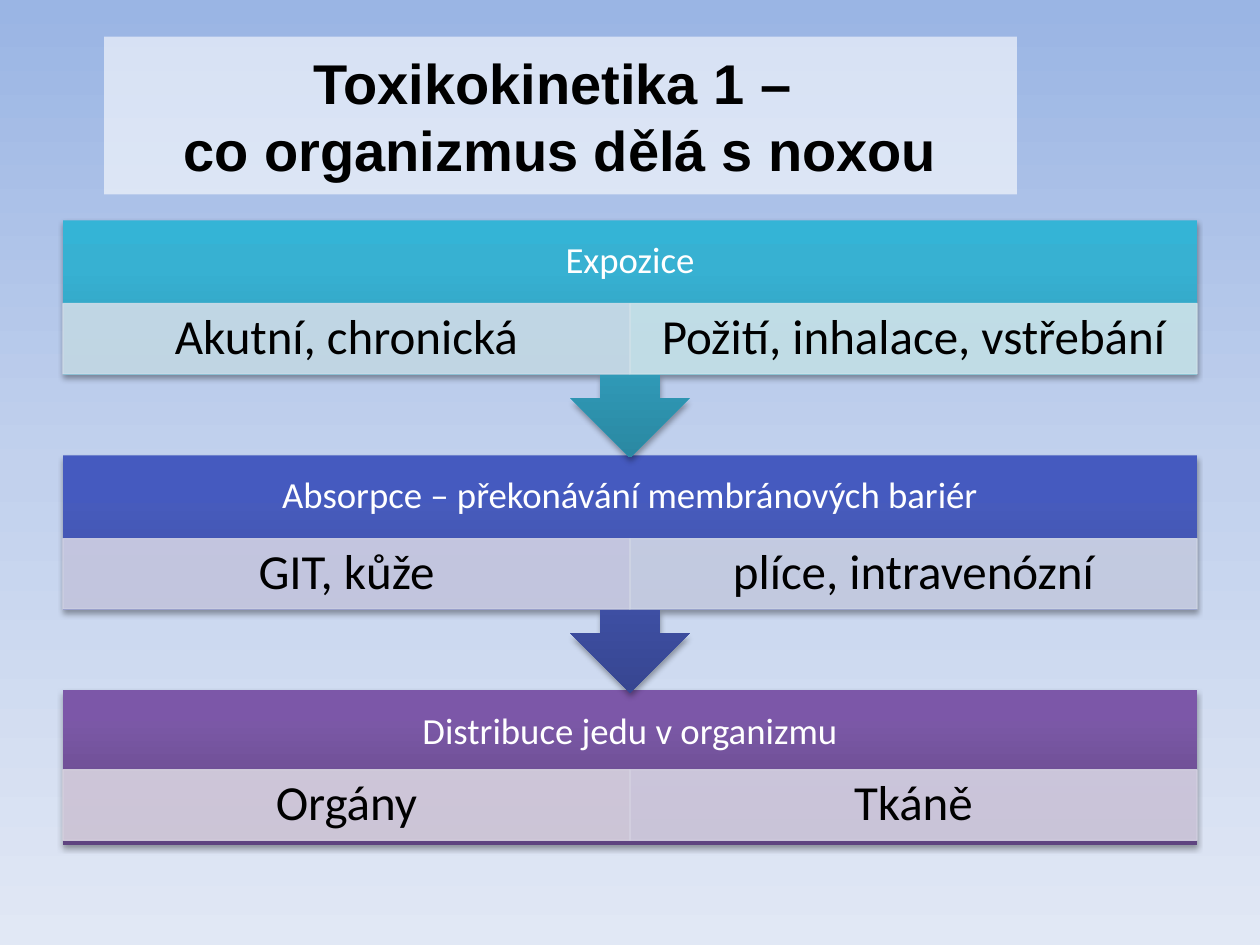
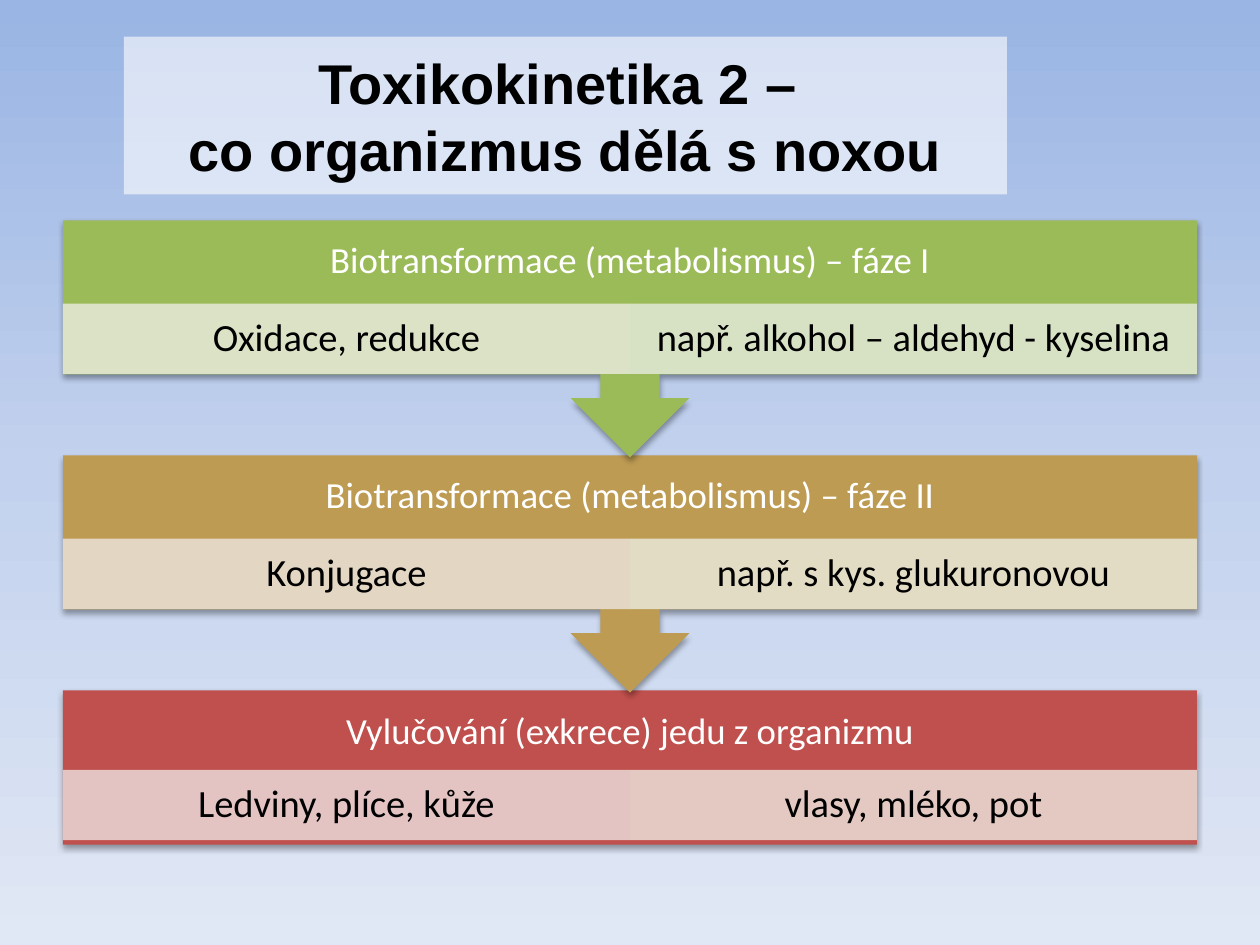
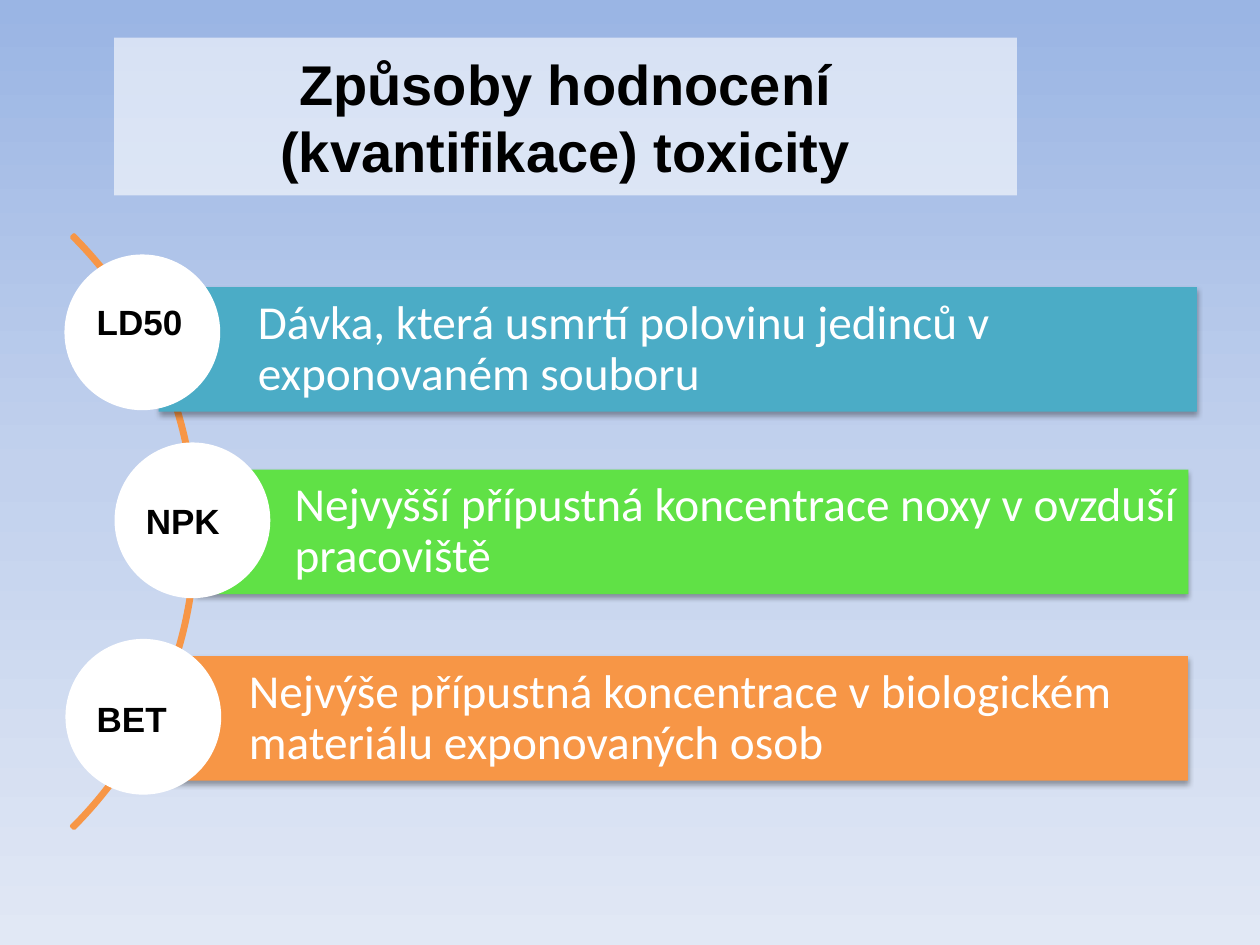
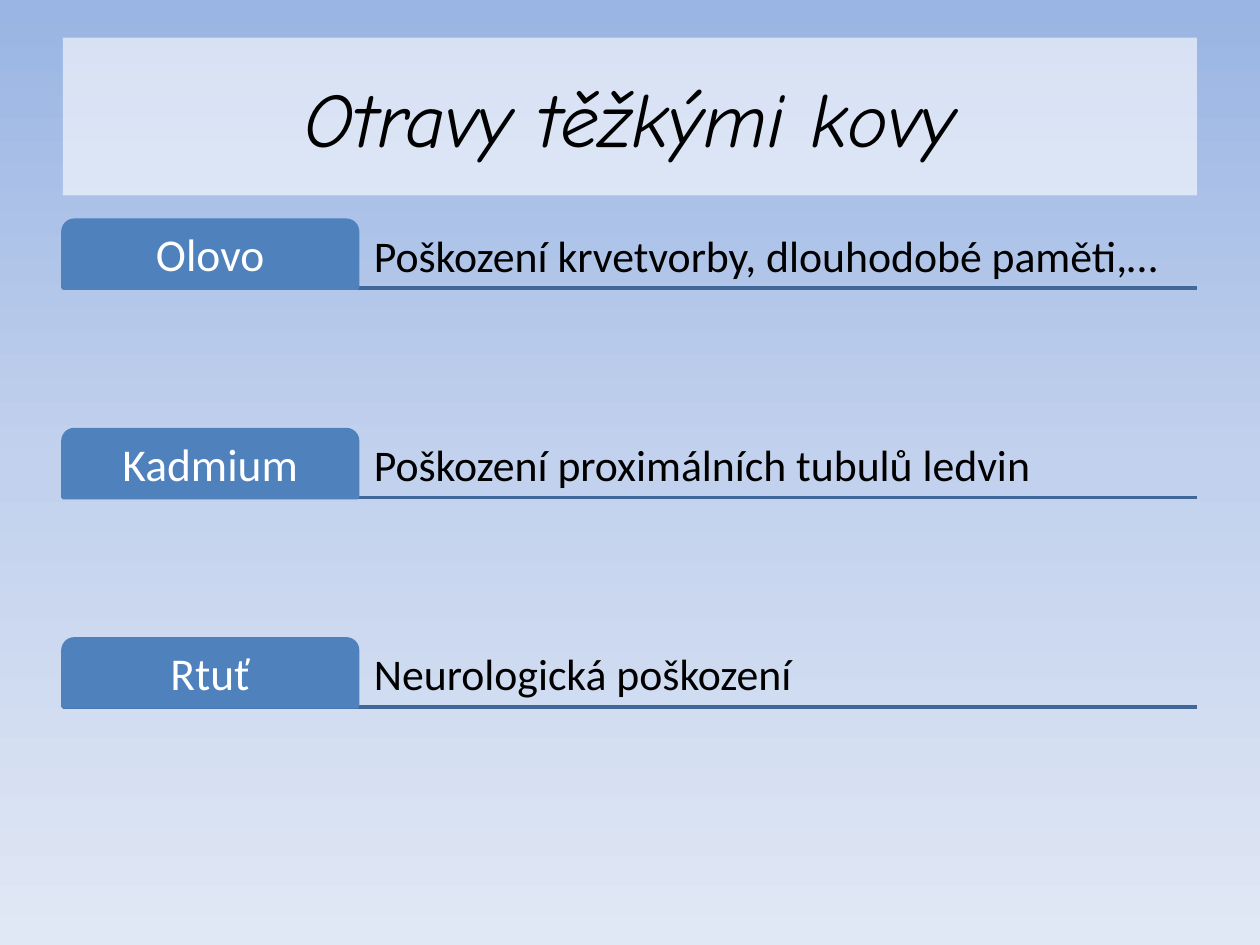
from dataclasses import dataclass

from lxml import etree
from pptx import Presentation
from pptx import util as u
from pptx.dml.color import RGBColor
from pptx.enum import shapes, text as t
from pptx.oxml.ns import qn

SHAPE = shapes.MSO_SHAPE
MIDDLE, BOTTOM, TOP = (t.MSO_ANCHOR.MIDDLE, t.MSO_ANCHOR.BOTTOM,
                       t.MSO_ANCHOR.TOP)


@dataclass(frozen=True)
class Theme:
    black: str = "000000"
    white: str = "FFFFFF"
    sky: tuple = ((0, "9AB5E4"), (50, "C2D1ED"), (100, "E1E8F5"))
    orange: str = "F79646"
    teal: str = "4BACC6"
    lime: str = "60E146"
    blue: str = "4F81BD"
    dark_blue: str = "3F6797"
    heading_font: str = "Arial"
    body_font: str = "Calibri"
    script_font: str = "Comic Neue"
    title_size: int = 32
    script_title_size: int = 44
    caption_size: int = 21
    large_cell_size: int = 28
    small_cell_size: int = 22
    band_size: int = 27
    label_size: int = 20
    tab_size: int = 26
    effect_size: int = 25


THEME = Theme()


def write(shape, content, *, size, color=THEME.black, font=THEME.body_font,
          bold=False, italic=False, align=t.PP_ALIGN.LEFT, anchor=MIDDLE,
          insets=(0.25, 0.13, 0.25, 0.13), spacing=0.9):
    """Fill a shape with one paragraph; insets are left, top, right, bottom in cm."""
    frame = shape.text_frame
    frame.word_wrap = True
    frame.vertical_anchor = anchor
    (frame.margin_left, frame.margin_top,
     frame.margin_right, frame.margin_bottom) = map(u.Cm, insets)
    paragraph = frame.paragraphs[0]
    paragraph.text = content
    paragraph.alignment = align
    paragraph.line_spacing = spacing
    for run in paragraph.runs:
        run.font.name = font
        run.font.size = u.Pt(size)
        run.font.bold = bold
        run.font.italic = italic
        run.font.color.rgb = RGBColor.from_string(color)


def paint(fill, owner, color):
    """Apply a plain colour, a tuple of gradient stops, or no fill."""
    if color is None:
        fill.background()
    elif isinstance(color, str):
        fill.solid()
        fill.fore_color.rgb = RGBColor.from_string(color)
    else:
        fill.gradient()
        fill.gradient_angle = 270
        gradient = next(owner.iter(qn("a:gradFill")))
        gradient.set("rotWithShape", "0")
        stops = gradient.find(qn("a:gsLst"))
        for stop in list(stops):
            stops.remove(stop)
        for position, value in color:
            stop = etree.SubElement(stops, qn("a:gs"), pos=str(position * 1000))
            etree.SubElement(stop, qn("a:srgbClr"), val=value)


def set_opacity(shape, percent):
    for color in shape.element.spPr.iter(qn("a:srgbClr")):
        etree.SubElement(color, qn("a:alpha"), val=str(percent * 1000))


def add_soft_shadow(shape):
    effects = shape.element.spPr.find(qn("a:effectLst"))
    shadow = etree.SubElement(effects, qn("a:outerShdw"), blurRad="40000",
                              dist="23000", dir="5400000", rotWithShape="0")
    color = etree.SubElement(shadow, qn("a:srgbClr"), val=THEME.black)
    etree.SubElement(color, qn("a:alpha"), val="35000")


class Deck:
    def __init__(self, theme):
        self.theme = theme
        self.presentation = Presentation()
        self.presentation.slide_width = u.Cm(25.4)
        self.presentation.slide_height = u.Cm(19.05)
        master = self.presentation.slide_master
        paint(master.background.fill, master.element, theme.sky)
        self.slide = None

    def new_slide(self):
        self.slide = self.presentation.slides.add_slide(
            self.presentation.slide_layouts[6])

    def shape(self, kind, box, fill=None, line=None, width=2, opacity=100,
              shadow=False):
        shape = self.slide.shapes.add_shape(kind, *map(u.Cm, box))
        shape.shadow.inherit = False
        paint(shape.fill, shape.element.spPr, fill)
        paint(shape.line.fill, shape.element.spPr, line)
        if line:
            shape.line.width = u.Pt(width)
        if opacity < 100:
            set_opacity(shape, opacity)
        if shadow:
            add_soft_shadow(shape)
        return shape

    def text(self, box, content, **style):
        write(self.slide.shapes.add_textbox(*map(u.Cm, box)), content, **style)

    def title(self, content, left, top, width, **style):
        panel = self.shape(SHAPE.RECTANGLE, (left, top, width, 3.18),
                           self.theme.white, opacity=60)
        look = dict(size=self.theme.title_size, font=self.theme.heading_font,
                    bold=True, align=t.PP_ALIGN.CENTER, spacing=1.0)
        write(panel, content, **(look | style))

    def rule(self, left, right, y):
        line = self.slide.shapes.add_connector(
            shapes.MSO_CONNECTOR.STRAIGHT, *map(u.Cm, (left, y, right, y)))
        line.line.color.rgb = RGBColor.from_string(self.theme.dark_blue)
        line.line.width = u.Pt(2)
        etree.SubElement(line.element.spPr, qn("a:effectLst"))

    def process(self, steps, cell_size, cell_insets, outlined):
        """Stack steps of (caption, fill, cells) joined by arrows, last one at the back."""
        left, top, width, pitch = 1.27, 4.44, 22.86, 4.74
        for index, (caption, fill, cells) in reversed(list(enumerate(steps))):
            y = top + index * pitch
            is_last = index == len(steps) - 1
            kind = SHAPE.RECTANGLE if is_last else SHAPE.UP_ARROW_CALLOUT
            block = self.shape(kind, (left, y, width, 3.11 if is_last else 4.78),
                               fill, shadow=True)
            block.rotation = 0 if is_last else 180
            self.text((left, y, width, 1.68), caption,
                      size=self.theme.caption_size, color=self.theme.white,
                      align=t.PP_ALIGN.CENTER, insets=(0.41,) * 4)
            cell_width = width / len(cells)
            cell_top = y + (1.6 if is_last else 1.68)
            for column, (content, tint) in enumerate(cells):
                cell = self.shape(
                    SHAPE.RECTANGLE,
                    (left + column * cell_width, cell_top, cell_width, 1.42),
                    tint, line=tint if outlined else None, width=0.75, opacity=90)
                write(cell, content, size=cell_size, align=t.PP_ALIGN.CENTER,
                      insets=cell_insets)

    def band(self, content, box, fill, circle):
        bar = self.shape(SHAPE.RECTANGLE, box, fill, shadow=True)
        write(bar, content, size=self.theme.band_size, color=self.theme.white,
              insets=(2.0, 0.17, 0.17, 0.17))
        self.shape(SHAPE.OVAL, (*circle, 3.14, 3.14), self.theme.white)

    def label(self, content, left, top):
        self.text((left, top, 2.5, 1.11), content, size=self.theme.label_size,
                  font=self.theme.heading_font, bold=True, anchor=TOP,
                  spacing=1.0)

    def tab_row(self, name, effect, top):
        left, tab_width, right, height = 1.27, 5.94, 24.13, 1.37
        self.rule(left, right, top + height)
        self.text((left + tab_width, top, right - left - tab_width, height),
                  effect, size=self.theme.effect_size, anchor=BOTTOM,
                  insets=(0.33, 0.13, 0.13, 0.13))
        tab = self.shape(SHAPE.ROUND_2_SAME_RECTANGLE,
                         (left, top, tab_width, height),
                         self.theme.blue, line=self.theme.blue)
        write(tab, name, size=self.theme.tab_size, color=self.theme.white,
              align=t.PP_ALIGN.CENTER, insets=(0.13, 0.18, 0.13, 0.13))


def shaded(top, middle, bottom):
    """Gradient that darkens over the lower four fifths."""
    return (0, top), (20, middle), (100, bottom)


def exposure_slide(deck):
    deck.new_slide()
    deck.title("Toxikokinetika 1 – \nco organizmus dělá s noxou", 2.1, 0.74, 18.4)
    deck.process([
        ("Expozice", shaded("34B4D6", "37B1D2", "2A88A2"),
         [("Akutní, chronická", "D0DCE8"),
          ("Požití, inhalace, vstřebání", "D0E3EA")]),
        ("Absorpce – překonávání membránových bariér",
         shaded("455ABF", "475BBC", "374691"),
         [("GIT, kůže", "D1D2E4"), ("plíce, intravenózní", "D1D7E6")]),
        ("Distribuce jedu v organizmu", shaded("7C57A8", "7B58A6", "5F4480"),
         [("Orgány", "D8D3E0"), ("Tkáně", "D5D2E2")]),
    ], deck.theme.large_cell_size, (0.55, 0.1, 0.55, 0.1), outlined=True)


def metabolism_slide(deck):
    deck.new_slide()
    deck.title("Toxikokinetika 2 – \nco organizmus dělá s noxou", 2.5, 0.74, 17.8)
    deck.process([
        ("Biotransformace (metabolismus) – fáze I", "9BBB59",
         [("Oxidace, redukce", "E4E7D1"),
          ("např. alkohol – aldehyd - kyselina", "DEE7D1")]),
        ("Biotransformace (metabolismus) – fáze II", "BD9B53",
         [("Konjugace", "E8DED1"), ("např. s kys. glukuronovou", "E8E4D1")]),
        ("Vylučování (exkrece) jedu z organizmu", "C0504D",
         [("Ledviny, plíce, kůže", "E8D0D0"), ("vlasy, mléko, pot", "E8D7D0")]),
    ], deck.theme.small_cell_size, (0.43, 0.08, 0.43, 0.08), outlined=False)


def toxicity_slide(deck):
    theme = deck.theme
    deck.new_slide()
    deck.title("Způsoby hodnocení (kvantifikace) toxicity", 2.3, 0.76, 18.2)
    arc = deck.shape(SHAPE.BLOCK_ARC, (-12.95, 2.26, 16.92, 16.92),
                     line=theme.orange)
    for index, value in enumerate((189, 27, 0.004)):
        arc.adjustments[index] = value
    deck.band("Dávka, která usmrtí polovinu jedinců v exponovaném souboru",
              (3.2, 5.79, 20.93, 2.51), theme.teal, (1.3, 5.13))
    deck.band("Nejvyšší přípustná koncentrace noxy v ovzduší pracoviště",
              (3.94, 9.47, 20.02, 2.51), theme.lime, (2.31, 8.92))
    deck.band("Nejvýše přípustná koncentrace v biologickém materiálu "
              "exponovaných osob",
              (3.02, 13.23, 20.93, 2.51), theme.orange, (1.32, 12.88))
    for name, left, top in (("LD50", 1.7, 5.92), ("NPK", 2.69, 9.93),
                            ("BET", 1.7, 13.94)):
        deck.label(name, left, top)


def metals_slide(deck):
    theme = deck.theme
    deck.new_slide()
    deck.title("Otravy těžkými kovy", 1.27, 0.76, 22.86, font=theme.script_font,
               size=theme.script_title_size, bold=False, italic=True)
    metals = (("Olovo", "Poškození krvetvorby, dlouhodobé paměti,…"),
              ("Kadmium", "Poškození proximálních tubulů ledvin"),
              ("Rtuť", "Neurologická poškození"))
    for index, (name, effect) in enumerate(metals):
        deck.tab_row(name, effect, 4.44 + index * 4.22)


def main():
    deck = Deck(THEME)
    for build in (exposure_slide, metabolism_slide, toxicity_slide, metals_slide):
        build(deck)
    deck.presentation.save("out.pptx")


if __name__ == "__main__":
    main()
